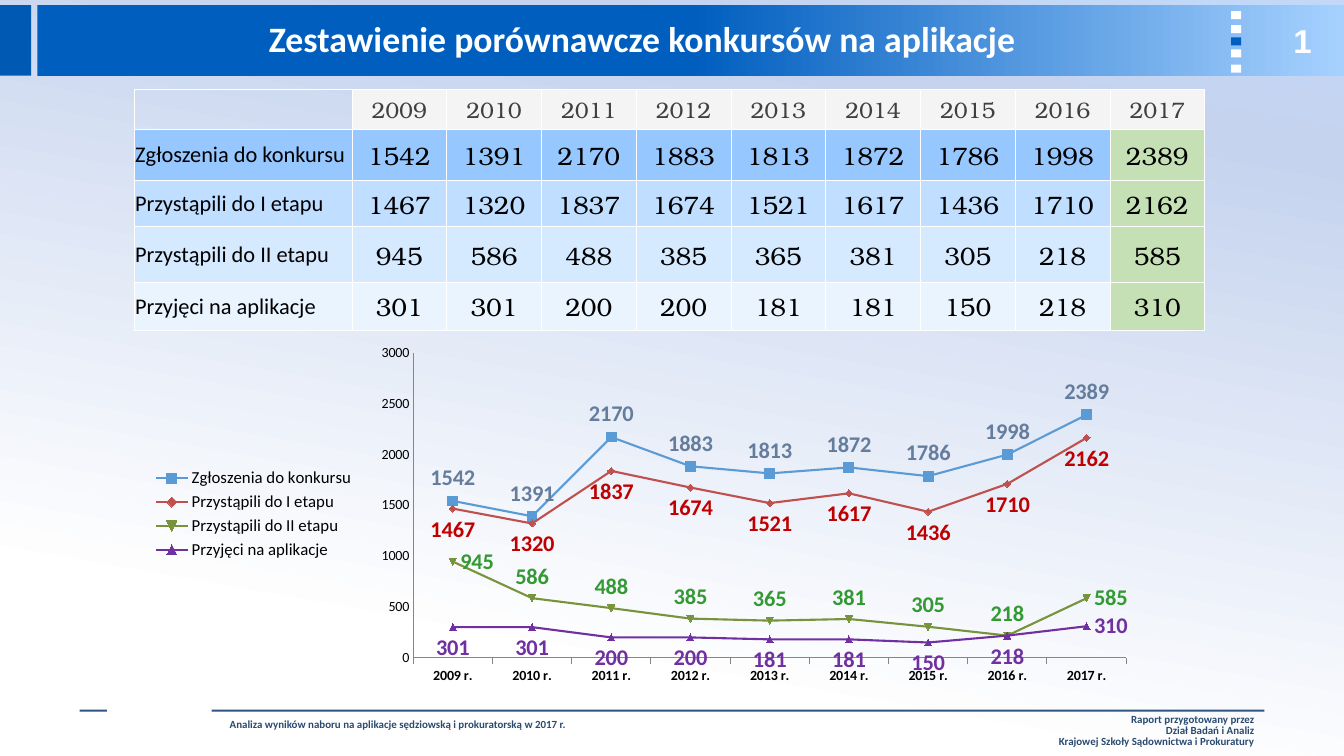
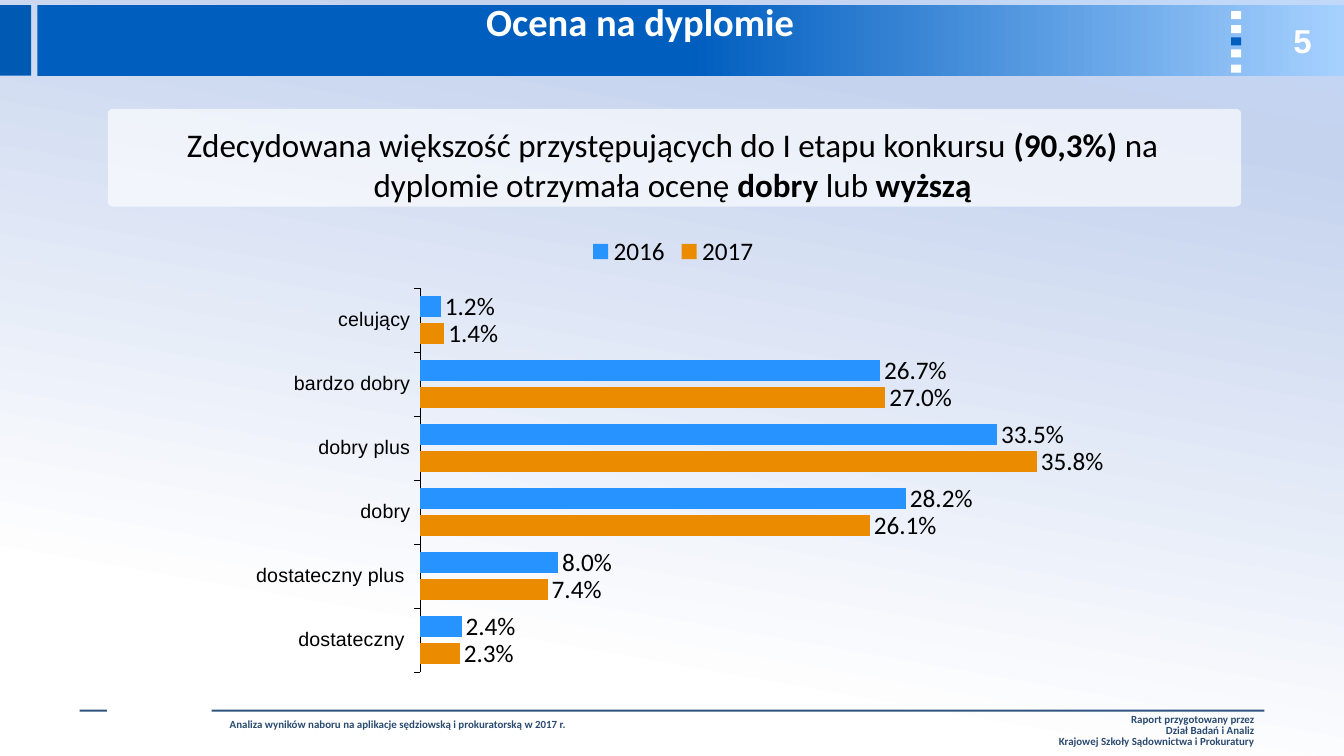
from lxml import etree
from pptx import Presentation
from pptx import util as u
from pptx.chart.data import CategoryChartData
from pptx.dml.color import RGBColor
from pptx.enum import chart as charts, shapes, text
from pptx.oxml.ns import qn

Inches, Pt = u.Inches, u.Pt

# Shared look
WHITE, BLACK, BLUE, FOOTER_LINE = "FFFFFF", "000000", "005EBF", "305480"
SANS, SERIF = "Calibri", "TeX Gyre Bonum"
BACKGROUND_STOPS = [(19, WHITE), (84, "C5D3EE"), (100, "C2D8F8")]
BAND_STOPS = [(50, BLUE), (100, "A6D1FF")]
TITLE_FONT = {"name": SANS, "color": WHITE, "bold": True}
NUMBER_FONT = {"name": "Arial", "size": 23.6, "color": WHITE, "bold": True}
FOOTER_FONT = {"name": SANS, "size": 7.8, "color": "2A4A70", "bold": True}
FOOTER_LEFT = "Analiza wyników naboru na aplikacje sędziowską i prokuratorską w 2017 r."
FOOTER_RIGHT = ["Raport przygotowany przez", "Dział Badań i Analiz",
                "Krajowej Szkoły Sądownictwa i Prokuratury"]

# Slide 1: table and line chart use the same numbers
YEARS = list(range(2009, 2018))
STAGES = [
    {"name": "Zgłoszenia do konkursu", "row_fill": "96C8FF", "height": 0.51,
     "values": [1542, 1391, 2170, 1883, 1813, 1872, 1786, 1998, 2389],
     "line": "5B9BD5", "label": "657D9D", "marker": 7, "position": "ABOVE", "right": []},
    {"name": "Przystąpili do I etapu", "row_fill": "C0DEFF", "height": 0.46,
     "values": [1467, 1320, 1837, 1674, 1521, 1617, 1436, 1710, 2162],
     "line": "C0504D", "label": "C00000", "marker": 5, "position": "BELOW", "right": []},
    {"name": "Przystąpili do II etapu", "row_fill": "D5E9FF", "height": 0.55,
     "values": [945, 586, 488, 385, 365, 381, 305, 218, 585],
     "line": "77933C", "label": "339933", "marker": 5, "position": "ABOVE", "right": [0, 8]},
    {"name": "Przyjęci na aplikacje", "row_fill": "EAF4FF", "height": 0.48,
     "values": [301, 301, 200, 200, 181, 181, 150, 218, 310],
     "line": "7030A0", "label": "7030A0", "marker": 5, "position": "BELOW", "right": [8]},
]
HEADER_FILL, LAST_YEAR_FILL = "F4F4F4", "C5E0B4"

# Slide 2
GRADE_MESSAGE = [("Zdecydowana większość przystępujących do I etapu konkursu ", False),
                 ("(90,3%) ", True), ("na dyplomie otrzymała ocenę ", False),
                 ("dobry ", True), ("lub ", False), ("wyższą", True)]
GRADES = ["dostateczny ", "dostateczny plus ", "dobry", "dobry plus", "bardzo dobry", "celujący"]
GRADE_SERIES = [("2017", "EA8B00", [0.023, 0.074, 0.261, 0.358, 0.27, 0.014]),
                ("2016", "2793FF", [0.024, 0.08, 0.282, 0.335, 0.267, 0.012])]


def rgb(value):
    return RGBColor.from_string(value)


def box_of(*lengths):
    return [Inches(length) for length in lengths]


def set_font(font, **values):
    for key, value in values.items():
        if key == "color":
            font.color.rgb = rgb(value)
        else:
            setattr(font, key, Pt(value) if key == "size" else value)


def set_all(target, **values):
    for key, value in values.items():
        setattr(target, key, value)


def set_gradient(fill, element, stops, angle):
    fill.gradient()
    gradient = element.find(".//" + qn("a:gradFill"))
    stop_list = gradient.find(qn("a:gsLst"))
    for old_stop in list(stop_list):
        stop_list.remove(old_stop)
    for position, color in stops:
        stop = etree.SubElement(stop_list, qn("a:gs"), pos=str(position * 1000))
        etree.SubElement(stop, qn("a:srgbClr"), val=color)
    gradient.find(qn("a:lin")).set("ang", str(angle * 60000))


def add_box(slide, box, color, kind="RECTANGLE", opacity=None):
    shape = slide.shapes.add_shape(getattr(shapes.MSO_SHAPE, kind), *box_of(*box))
    shape.shadow.inherit = False
    shape.line.fill.background()
    shape.fill.solid()
    shape.fill.fore_color.rgb = rgb(color)
    if opacity:
        color_element = shape.element.spPr.find(".//" + qn("a:srgbClr"))
        etree.SubElement(color_element, qn("a:alpha"), val=str(opacity * 1000))
    return shape


def add_text(slide, box, lines, font, align="LEFT", spacing=1.0, anchor="TOP"):
    frame = slide.shapes.add_textbox(*box_of(*box)).text_frame
    set_all(frame, word_wrap=False, vertical_anchor=getattr(text.MSO_ANCHOR, anchor))
    for index, line in enumerate(lines):
        paragraph = frame.add_paragraph() if index else frame.paragraphs[0]
        set_all(paragraph, text=line, line_spacing=spacing,
                alignment=getattr(text.PP_ALIGN, align))
        set_font(paragraph.runs[0].font, **font)


def build_layout(presentation, layout, slide):
    """Draw bands and footer on a slide, then move them to its layout."""
    master = presentation.slide_master
    set_gradient(master.background.fill, master.element, BACKGROUND_STOPS, 280)
    for placeholder in list(layout.placeholders):
        if placeholder.placeholder_format.idx:
            layout.shapes.element.remove(placeholder.element)

    # Title band with its column of small squares
    band = add_box(slide, (0.37, 0.05, 12.96, 0.7), BLUE)
    set_gradient(band.fill, band.element, BAND_STOPS, 0)
    add_box(slide, (0, 0.05, 0.31, 0.7), "005AB4")
    for index, top in enumerate([0.11, 0.25, 0.37, 0.49, 0.64]):
        add_box(slide, (12.21, top, 0.1, 0.08), BLUE if index == 2 else WHITE)

    # Footer
    add_box(slide, (1.12, 6.57, 0.91, 0.87), WHITE, "OVAL", 75)
    add_text(slide, (2.18, 7.07, 3.58, 0.23), [FOOTER_LEFT], FOOTER_FONT)
    add_text(slide, (10.36, 7.04, 2.18, 0.44), FOOTER_RIGHT, FOOTER_FONT, "RIGHT", 0.85)
    for left, width in [(0.79, 0.27), (2.1, 10.44)]:
        add_box(slide, (left, 7.04, width, 0.02), FOOTER_LINE)

    for shape in list(slide.shapes):
        if not shape.is_placeholder:
            layout.shapes.element.append(shape.element)


def add_heading(slide, title, number, box, size, spacing):
    placeholder = slide.shapes.title
    left, top, width, height = box_of(*box)
    set_all(placeholder, left=left, top=top, width=width, height=height)
    frame = placeholder.text_frame
    frame.text = title
    set_all(frame, word_wrap=True, vertical_anchor=text.MSO_ANCHOR.TOP,
            auto_size=text.MSO_AUTO_SIZE.NONE)
    paragraph = frame.paragraphs[0]
    set_all(paragraph, alignment=text.PP_ALIGN.CENTER, line_spacing=spacing)
    set_font(paragraph.runs[0].font, size=size, **TITLE_FONT)
    add_text(slide, (12.62, 0.15, 0.6, 0.5), [number], NUMBER_FONT, "CENTER", anchor="MIDDLE")


def fill_cell(cell, value, fill, font, align):
    set_all(cell, vertical_anchor=text.MSO_ANCHOR.MIDDLE, margin_left=Inches(0.01),
            margin_right=Inches(0.01), margin_top=Inches(0.01), margin_bottom=0)
    if fill:
        cell.fill.solid()
        cell.fill.fore_color.rgb = rgb(fill)
    else:
        cell.fill.background()
    paragraph = cell.text_frame.paragraphs[0]
    paragraph.alignment = getattr(text.PP_ALIGN, align)
    if value:
        paragraph.text = value
        set_font(paragraph.runs[0].font, **font)
    properties = cell._tc.get_or_add_tcPr()
    for index, side in enumerate(["a:lnL", "a:lnR", "a:lnT", "a:lnB"]):
        border = etree.Element(qn(side), w=str(Pt(0.5)))
        solid = etree.SubElement(border, qn("a:solidFill"))
        etree.SubElement(solid, qn("a:srgbClr"), val=WHITE)
        properties.insert(index, border)


def add_stage_table(slide):
    widths = [2.16] + [0.94] * len(YEARS)
    heights = [0.39] + [stage["height"] for stage in STAGES]
    table = slide.shapes.add_table(len(heights), len(widths),
                                   *box_of(1.33, 0.89, sum(widths), sum(heights))).table
    set_all(table, first_row=False, horz_banding=False)
    for column, width in zip(table.columns, widths):
        column.width = Inches(width)
    for row, height in zip(table.rows, heights):
        row.height = Inches(height)

    header_font = {"name": SERIF, "size": 16, "color": "404040"}
    name_font = {"name": SANS, "size": 16, "color": BLACK}
    value_font = {"name": SERIF, "size": 18, "color": BLACK}
    fill_cell(table.cell(0, 0), "", None, header_font, "LEFT")
    for column, year in enumerate(YEARS, 1):
        fill_cell(table.cell(0, column), str(year), HEADER_FILL, header_font, "CENTER")
    for row, stage in enumerate(STAGES, 1):
        fill_cell(table.cell(row, 0), stage["name"], stage["row_fill"], name_font, "LEFT")
        for column, value in enumerate(stage["values"], 1):
            fill = LAST_YEAR_FILL if column == len(YEARS) else stage["row_fill"]
            fill_cell(table.cell(row, column), str(value), fill, value_font, "CENTER")


def manual_layout(**values):
    layout = etree.Element(qn("c:layout"))
    manual = etree.SubElement(layout, qn("c:manualLayout"))
    for key, value in values.items():
        etree.SubElement(manual, qn("c:" + key), val=str(value))
    return layout


def add_chart(slide, kind, box, categories, series, plot_area, size, legend):
    data = CategoryChartData()
    data.categories = categories
    for name, values in series:
        data.add_series(name, values)
    chart = slide.shapes.add_chart(getattr(charts.XL_CHART_TYPE, kind), *box_of(*box), data).chart
    set_all(chart, has_title=False, has_legend=True)
    set_font(chart.font, name=SANS, size=size, color=BLACK)
    position, legend_size = legend
    set_all(chart.legend, include_in_layout=False,
            position=getattr(charts.XL_LEGEND_POSITION, position))
    set_font(chart.legend.font, name=SANS, size=legend_size, color=BLACK)
    chart.value_axis.has_major_gridlines = False
    set_all(chart.category_axis, has_major_gridlines=False,
            major_tick_mark=charts.XL_TICK_MARK.OUTSIDE)
    chart.plots[0].vary_by_categories = False

    area = chart.element.find(".//" + qn("c:plotArea"))
    for old_layout in area.findall(qn("c:layout")):
        area.remove(old_layout)
    left, top, width, height = plot_area
    area.insert(0, manual_layout(layoutTarget="inner", xMode="edge", yMode="edge",
                                 x=left, y=top, w=width, h=height))
    return chart


def add_stage_chart(slide):
    chart = add_chart(slide, "LINE_MARKERS", (1.41, 3.36, 9.96, 3.48),
                      [f"{year} r." for year in YEARS],
                      [(stage["name"], stage["values"]) for stage in STAGES],
                      (0.27, 0.04, 0.71, 0.87), 10, ("LEFT", 12))
    set_all(chart.value_axis, minimum_scale=0, maximum_scale=3000, major_unit=500,
            major_tick_mark=charts.XL_TICK_MARK.NONE)
    chart.category_axis.tick_labels.font.bold = True
    for axis in (chart.value_axis, chart.category_axis):
        axis.format.line.color.rgb = rgb("868686")
        axis.format.line.width = Pt(0.75)
    for series, stage in zip(chart.plots[0].series, STAGES):
        color = rgb(stage["line"])
        series.smooth = False
        series.format.line.color.rgb = color
        series.format.line.width = Pt(1.5)
        set_all(series.marker, style=charts.XL_MARKER_STYLE.AUTOMATIC, size=stage["marker"])
        series.marker.format.fill.solid()
        series.marker.format.fill.fore_color.rgb = color
        series.marker.format.line.color.rgb = color
        label_font = {"name": SANS, "size": 16, "bold": True, "color": stage["label"]}
        set_all(series.data_labels, show_value=True,
                position=getattr(charts.XL_LABEL_POSITION, stage["position"]))
        set_font(series.data_labels.font, **label_font)
        for index in stage["right"]:
            label = series.points[index].data_label
            set_font(label.font, **label_font)
            label.position = charts.XL_LABEL_POSITION.RIGHT


def add_grade_message(slide):
    panel = add_box(slide, (1.07, 1.08, 11.24, 0.97), WHITE, "ROUNDED_RECTANGLE", 65)
    panel.adjustments[0] = 0.05
    frame = panel.text_frame
    set_all(frame, word_wrap=True, vertical_anchor=text.MSO_ANCHOR.TOP, margin_top=Inches(0.14),
            margin_left=Inches(0.22), margin_right=Inches(0.26), margin_bottom=0)
    paragraph = frame.paragraphs[0]
    paragraph.alignment = text.PP_ALIGN.CENTER
    for words, bold in GRADE_MESSAGE:
        run = paragraph.add_run()
        run.text = words
        set_font(run.font, name=SANS, size=23.6, color=BLACK, bold=bold)


def add_grade_chart(slide):
    chart = add_chart(slide, "BAR_CLUSTERED", (1.72, 2.2, 10.2, 4.7), GRADES,
                      [(name, values) for name, _, values in GRADE_SERIES],
                      (0.24, 0.14, 0.67, 0.81), 18, ("TOP", 18))
    legend_position = chart.element.find(".//" + qn("c:legendPos"))
    legend_position.addnext(manual_layout(xMode="edge", yMode="edge", x=0.4, y=0.02))
    set_all(chart.value_axis, visible=False, minimum_scale=0, maximum_scale=0.4)
    set_font(chart.category_axis.tick_labels.font, name="Arial", size=14, color=BLACK)
    chart.category_axis.format.line.color.rgb = rgb(BLACK)
    chart.category_axis.format.line.width = Pt(0.25)
    set_all(chart.plots[0], gap_width=75, overlap=-30)
    for series, (_, color, _) in zip(chart.plots[0].series, GRADE_SERIES):
        series.format.fill.solid()
        series.format.fill.fore_color.rgb = rgb(color)
        set_all(series.data_labels, show_value=True, number_format="0.0%",
                number_format_is_linked=False, position=charts.XL_LABEL_POSITION.OUTSIDE_END)
        set_font(series.data_labels.font, name=SANS, size=18, color=BLACK)


def main():
    presentation = Presentation()
    set_all(presentation, slide_width=Inches(13.33), slide_height=Inches(7.5))
    layout = presentation.slide_layouts[5]

    comparison = presentation.slides.add_slide(layout)
    build_layout(presentation, layout, comparison)
    add_heading(comparison, "Zestawienie porównawcze konkursów na aplikacje", "1",
                (1.18, 0.12, 10.38, 0.53), 25.5, 1.0)
    add_stage_table(comparison)
    add_stage_chart(comparison)

    grades = presentation.slides.add_slide(layout)
    add_heading(grades, "Ocena na dyplomie", "5", (1.17, 0.02, 10.36, 0.48), 27.5, 0.8)
    add_grade_message(grades)
    add_grade_chart(grades)

    presentation.save("out.pptx")


if __name__ == "__main__":
    main()
